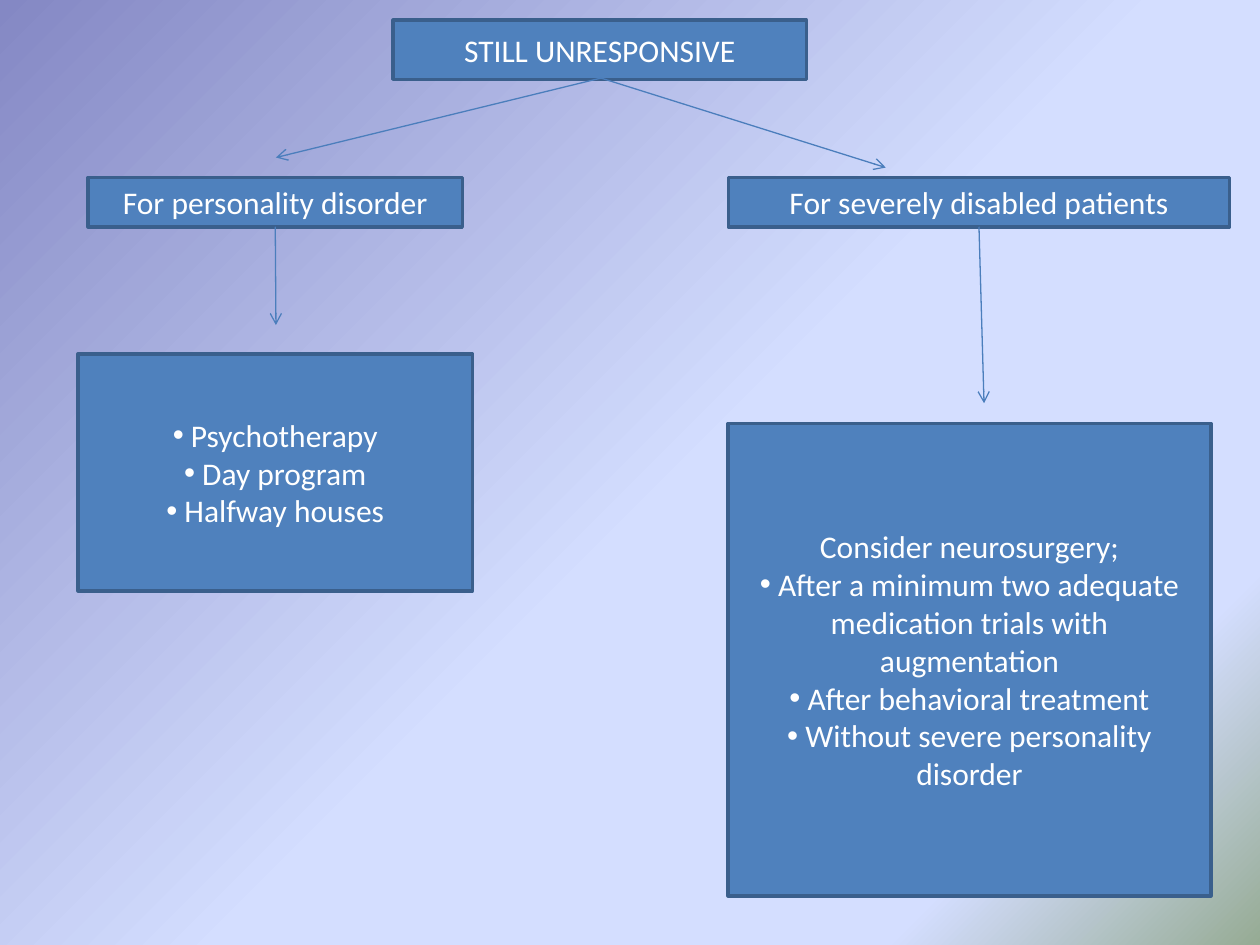
from lxml import etree
from pptx import Presentation
from pptx.dml.color import RGBColor
from pptx.enum.shapes import MSO_CONNECTOR, MSO_SHAPE
from pptx.enum.text import MSO_ANCHOR, PP_ALIGN
from pptx.oxml.ns import qn
from pptx.util import Inches, Pt

RECT = MSO_SHAPE.RECTANGLE
STRAIGHT = MSO_CONNECTOR.STRAIGHT
CENTER = PP_ALIGN.CENTER
MIDDLE = MSO_ANCHOR.MIDDLE

FONT = "Calibri"
BOX_FILL, BOX_LINE, ARROW, WHITE = "4F81BD", "3A5F8C", "4B7EBC", "FFFFFF"
BACKGROUND = [(0, "8488C4"), (53, "D4DEFF"), (83, "D4DEFF"), (100, "96AB94")]


def color(hex_string):
    return RGBColor.from_string(hex_string)


def add_background(s):
    """Diagonal four-stop gradient from top left to bottom right."""
    fill = s.background.fill
    fill.gradient()
    fill.gradient_angle = 315
    stops = next(s.element.iter(qn("a:gsLst")))
    for stop in list(stops):
        stops.remove(stop)
    for percent, hex_string in BACKGROUND:
        stop = etree.SubElement(stops, qn("a:gs"), pos=str(percent * 1000))
        etree.SubElement(stop, qn("a:srgbClr"), val=hex_string)


def add_bullet(p):
    pPr = p._p.get_or_add_pPr()
    pPr.set("marL", "0")
    pPr.set("indent", "0")
    etree.SubElement(pPr, qn("a:buFont"), typeface="Arial")
    etree.SubElement(pPr, qn("a:buChar"), char="•")


def add_box(s, box, bullets=(), heading=None):
    """Blue box with an optional heading line above its bullets."""
    sp = s.shapes.add_shape(RECT, *map(Inches, box))
    sp.shadow.inherit = False
    sp.fill.solid()
    sp.fill.fore_color.rgb = color(BOX_FILL)
    sp.line.color.rgb = color(BOX_LINE)
    sp.line.width = Pt(2)
    tf = sp.text_frame
    tf.word_wrap = True
    tf.vertical_anchor = MIDDLE
    lines = [(heading, False)] if heading else []
    lines += [(" " + text, True) for text in bullets]
    for i, (text, bulleted) in enumerate(lines):
        p = tf.paragraphs[0] if i == 0 else tf.add_paragraph()
        p.alignment = CENTER
        if bulleted:
            add_bullet(p)
        r = p.add_run()
        r.text = text
        r.font.name = FONT
        r.font.size = Pt(18)
        r.font.color.rgb = color(WHITE)


def add_arrow(s, start, end):
    line = s.shapes.add_connector(STRAIGHT, *map(Inches, start + end))
    line.line.color.rgb = color(ARROW)
    line.line.width = Pt(0.75)
    etree.SubElement(line.line._get_or_add_ln(), qn("a:tailEnd"), type="arrow")
    etree.SubElement(line._element.spPr, qn("a:effectLst"))


def add_branch(s, title_box, title, detail_box, bullets, arrow_end, heading=None):
    """Branch title, arrow down, and the box of options."""
    left, top, width, height = title_box
    add_box(s, title_box, heading=title)
    add_arrow(s, (left + width / 2, top + height), arrow_end)
    add_box(s, detail_box, bullets, heading)


def main():
    prs = Presentation()
    prs.slide_width, prs.slide_height = Inches(10), Inches(7.5)
    s = prs.slides.add_slide(prs.slide_layouts[6])
    add_background(s)

    # Starting point and its two arrows
    add_box(s, (3.12, 0.16, 3.28, 0.47), heading="STILL UNRESPONSIVE")
    for end in ((7.03, 1.33), (2.19, 1.25)):
        add_arrow(s, (4.77, 0.62), end)

    # Right and left branches
    add_branch(s, (5.78, 1.41, 3.98, 0.39), "For severely disabled patients",
               (5.78, 3.36, 3.83, 3.75),
               ["After a minimum two adequate medication trials with augmentation",
                "After behavioral treatment",
                "Without severe personality disorder"],
               (7.81, 3.2), heading="Consider neurosurgery;")
    add_branch(s, (0.7, 1.41, 2.97, 0.39), "For personality disorder",
               (0.62, 2.81, 3.13, 1.88),
               ["Psychotherapy", "Day program", "Halfway houses"],
               (2.19, 2.58))

    prs.save("out.pptx")


if __name__ == "__main__":
    main()
